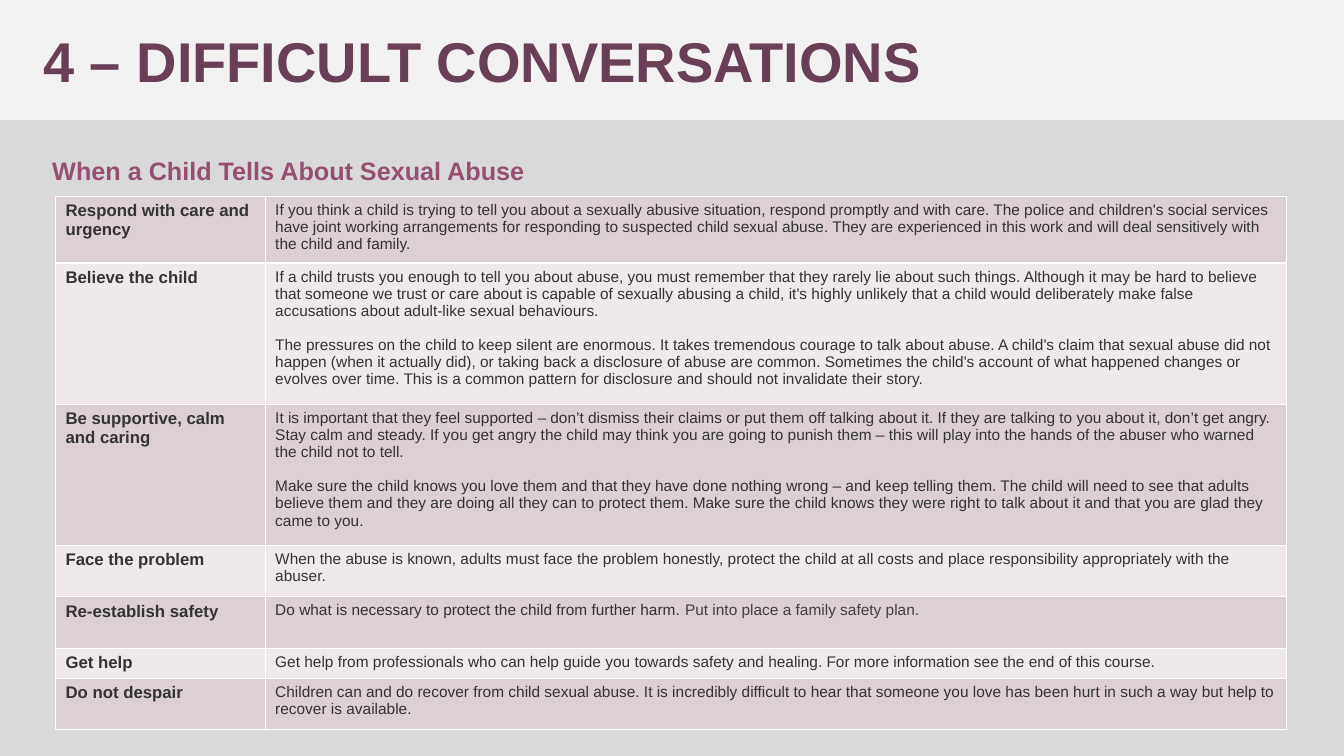
import pptx
import pptx.dml.color
import pptx.enum.shapes
import pptx.enum.text
import pptx.oxml
import pptx.oxml.ns
import pptx.util

Inches = pptx.util.Inches
Pt = pptx.util.Pt


def color(hex_text):
    return pptx.dml.color.RGBColor.from_string(hex_text)


def format_runs(paragraph, size, hex_text, bold):
    for run in paragraph.runs:
        run.font.name = "Arial"
        run.font.size = Pt(size)
        run.font.bold = bold
        run.font.color.rgb = color(hex_text)


presentation = pptx.Presentation()
presentation.slide_width = Inches(13.33)
presentation.slide_height = Inches(7.5)
slide = presentation.slides.add_slide(presentation.slide_layouts[6])
slide.background.fill.solid()
slide.background.fill.fore_color.rgb = color("D9D9D9")

# Title band
band = slide.shapes.add_shape(
    pptx.enum.shapes.MSO_SHAPE.RECTANGLE, 0, 0, Inches(13.33), Inches(1.19))
band.shadow.inherit = False
band.fill.solid()
band.fill.fore_color.rgb = color("F2F2F2")
band.line.fill.background()
band.text_frame.text = "4 – DIFFICULT CONVERSATIONS"
band.text_frame.margin_left = Inches(0.43)
band.text_frame.vertical_anchor = pptx.enum.text.MSO_ANCHOR.MIDDLE
title = band.text_frame.paragraphs[0]
title.alignment = pptx.enum.text.PP_ALIGN.LEFT
format_runs(title, 40, "683F56", True)

# Heading above the table
heading = slide.shapes.add_textbox(
    Inches(0.42), Inches(1.49), Inches(11.84), Inches(1.99))
heading.text_frame.word_wrap = True
heading.text_frame.text = "When a Child Tells About Sexual Abuse"
format_runs(heading.text_frame.paragraphs[0], 18, "954F72", True)

# Advice table: row height, topic, paragraphs
advice = [
    (0.66, "Respond with care and urgency", [
        "If you think a child is trying to tell you about a sexually abusive situation, respond "
        "promptly and with care. The police and children's social services have joint working "
        "arrangements for responding to suspected child sexual abuse. They are experienced in "
        "this work and will deal sensitively with the child and family."]),
    (1.4, "Believe the child", [
        "If a child trusts you enough to tell you about abuse, you must remember that they rarely "
        "lie about such things. Although it may be hard to believe that someone we trust or care "
        "about is capable of sexually abusing a child, it's highly unlikely that a child would "
        "deliberately make false accusations about adult-like sexual behaviours.",
        "The pressures on the child to keep silent are enormous. It takes tremendous courage to "
        "talk about abuse. A child's claim that sexual abuse did not happen (when it actually "
        "did), or taking back a disclosure of abuse are common. Sometimes the child's account of "
        "what happened changes or evolves over time. This is a common pattern for disclosure and "
        "should not invalidate their story."]),
    (1.4, "Be supportive, calm and caring", [
        "It is important that they feel supported – don’t dismiss their claims or put them off "
        "talking about it. If they are talking to you about it, don’t get angry. Stay calm and "
        "steady. If you get angry the child may think you are going to punish them – this will "
        "play into the hands of the abuser who warned the child not to tell.",
        "Make sure the child knows you love them and that they have done nothing wrong – and keep "
        "telling them. The child will need to see that adults believe them and they are doing all "
        "they can to protect them. Make sure the child knows they were right to talk about it and "
        "that you are glad they came to you."]),
    (0.51, "Face the problem", [
        "When the abuse is known, adults must face the problem honestly, protect the child at all "
        "costs and place responsibility appropriately with the abuser."]),
    (0.51, "Re-establish safety", [
        "Do what is necessary to protect the child from further harm. "]),
    (0.3, "Get help", [
        "Get help from professionals who can help guide you towards safety and healing. For more "
        "information see the end of this course."]),
    (0.51, "Do not despair", [
        "Children can and do recover from child sexual abuse. It is incredibly difficult to hear "
        "that someone you love has been hurt in such a way but help to recover is available."]),
]
table = slide.shapes.add_table(
    len(advice), 2, Inches(0.55), Inches(1.95), Inches(12.21), Inches(5.29)).table
table.columns[0].width = Inches(2.08)
table.columns[1].width = Inches(10.13)

for row_index, (height, topic, paragraphs) in enumerate(advice):
    table.rows[row_index].height = Inches(height)
    for column_index, (text, size) in enumerate([(topic, 12), ("\n".join(paragraphs), 11)]):
        cell = table.cell(row_index, column_index)
        cell.text_frame.text = text
        for paragraph_index, paragraph in enumerate(cell.text_frame.paragraphs):
            format_runs(paragraph, size, "333333", column_index == 0)
            if paragraph_index > 0:
                paragraph.space_before = Pt(12.3)
        properties = cell._tc.get_or_add_tcPr()
        for side in ("lnL", "lnR", "lnT", "lnB"):
            properties.append(pptx.oxml.parse_xml(
                f'<a:{side} {pptx.oxml.ns.nsdecls("a")} w="12700"><a:solidFill>'
                f'<a:srgbClr val="FFFFFF"/></a:solidFill></a:{side}>'))
        cell.fill.solid()
        cell.fill.fore_color.rgb = color("EFE9EB" if row_index % 2 else "DDD0D5")

# The closing sentence on safety is a lighter grey
safety_plan = table.cell(4, 1).text_frame.paragraphs[0].add_run()
safety_plan.text = "Put into place a family safety plan."
safety_plan.font.name = "Arial"
safety_plan.font.size = Pt(11)
safety_plan.font.bold = False
safety_plan.font.color.rgb = color("404040")

presentation.save("out.pptx")
